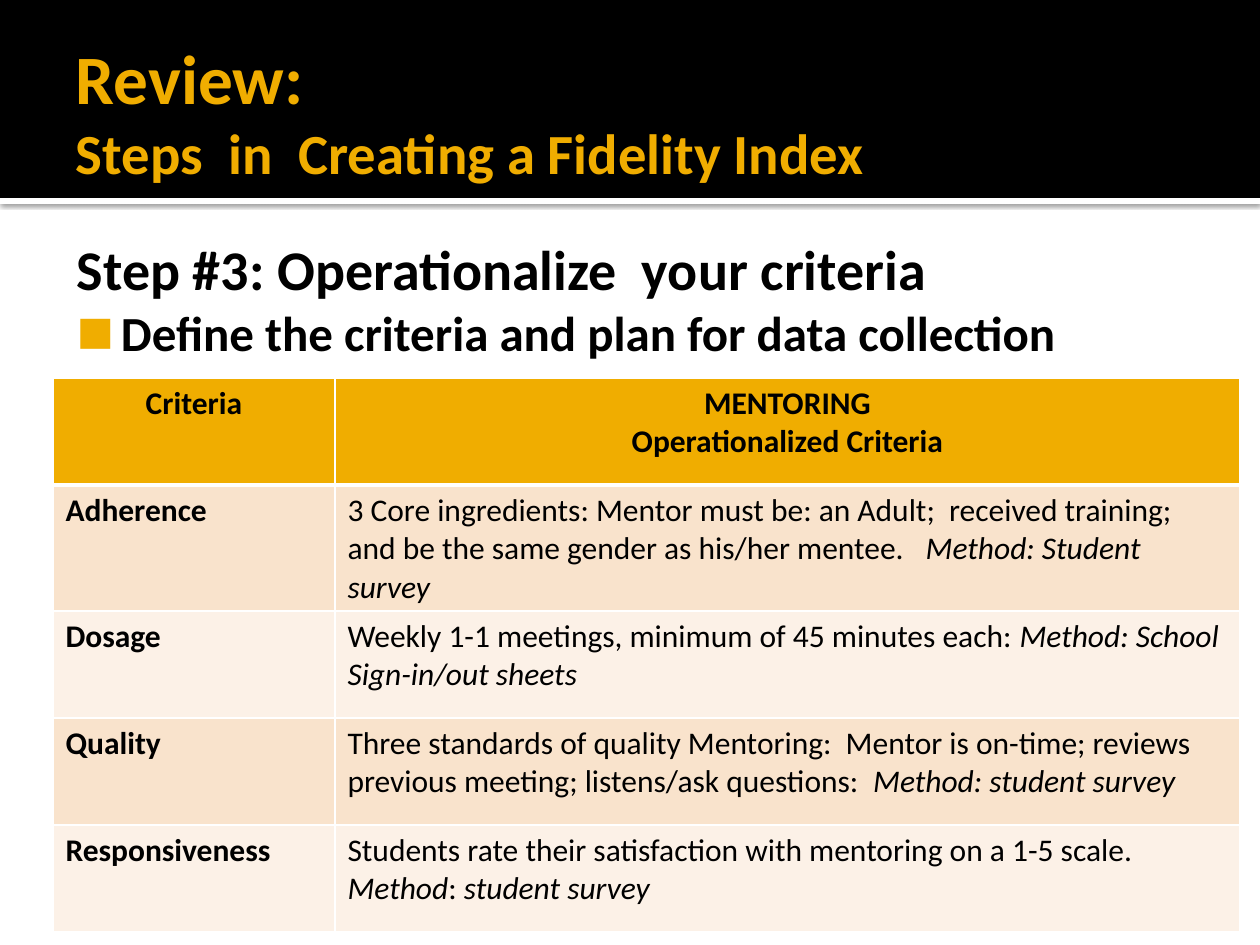
"""Build the fidelity index review slide with its table of criteria."""
from lxml import etree
from pptx import Presentation, util as u
from pptx.dml.color import RGBColor
from pptx.enum import shapes, text
from pptx.oxml.ns import qn

HUES = {"black": "000000", "white": "FFFFFF", "gold": "F0AD00",
        "peach": "F9E3CC", "cream": "FCF1E7"}
TITLE = [("Review:", 39.6), ("Steps  in  Creating a Fidelity Index", 32.4)]
STEPS = [("Step #3: Operationalize  your criteria", 32, False),
         ("Define the criteria and plan for data collection", 28, True)]
HEAD = ["Criteria"], ["MENTORING", "Operationalized Criteria"]
ROWS = [
    ("Adherence", [("3 Core ingredients: Mentor must be: an Adult;  received training; "
                    "and be the same gender as his/her mentee.   ", False),
                   ("Method: Student survey", True)]),
    ("Dosage", [("Weekly 1-1 meetings, minimum of 45 minutes each: ", False),
                ("Method: School Sign-in/out sheets", True)]),
    ("Quality", [("Three standards of quality Mentoring:  Mentor is on-time; reviews "
                  "previous meeting; listens/ask questions:  ", False),
                 ("Method: student survey", True)]),
    ("Responsiveness", [("Students rate their satisfaction with mentoring on a 1-5 scale. ", False),
                        ("Method", True), (": ", False), ("student survey", True)]),
]
COLS = 282, 905
ROW = 107


def px(n):
    return u.Emu(round(n * 914400 / 126))


def hue(name):
    return RGBColor.from_string(HUES[name])


def sub(node, tag, **atts):
    return etree.SubElement(node, qn(tag), {k: str(v) for k, v in atts.items()})


def style(font, size, name="black", bold=True):
    font.name, font.size, font.bold = "Calibri", u.Pt(size), bold
    font.color.rgb = hue(name)


def band(slide, top, high, name):
    bar = slide.shapes.add_shape(shapes.MSO_SHAPE.RECTANGLE, 0, px(top), px(1260), px(high))
    bar.shadow.inherit = False
    bar.fill.solid()
    bar.fill.fore_color.rgb = hue(name)
    bar.line.fill.background()
    return bar


def shade(bar):
    glow = sub(bar.element.spPr.find(qn("a:effectLst")), "a:outerShdw",
               blurRad=u.Pt(2.5), dist=u.Pt(0.8), dir=90 * 60000, algn="t", rotWithShape=0)
    sub(sub(glow, "a:srgbClr", val=HUES["black"]), "a:alpha", val=60000)


def frame(slide, box, pads):
    area = slide.shapes.add_textbox(*map(px, box)).text_frame
    area.word_wrap = True
    area.margin_left, area.margin_top, area.margin_right, area.margin_bottom = map(px, pads)
    return area


def dot(par, mark):
    props = par._p.get_or_add_pPr()
    props.set("marL", str(px(60)))
    props.set("indent", str(px(-44)))
    if mark:
        sub(sub(props, "a:buClr"), "a:srgbClr", val=HUES["gold"])
        sub(props, "a:buSzPct", val=80000)
        sub(props, "a:buFont", typeface="Calibri")
        sub(props, "a:buChar", char="■")
    else:
        sub(props, "a:buNone")


def paint(cell, name, base=1):
    props = cell._tc.get_or_add_tcPr()
    for side, wide in zip("LRTB", (1, 1, 1, base)):
        edge = sub(props, "a:ln" + side, w=u.Pt(wide))
        sub(sub(edge, "a:solidFill"), "a:srgbClr", val=HUES["white"])
    cell.fill.solid()
    cell.fill.fore_color.rgb = hue(name)


def grid(slide):
    count = len(ROWS) + 1
    table = slide.shapes.add_table(count, len(COLS), px(53), px(378),
                                   px(sum(COLS)), px(ROW * count)).table
    for col, wide in zip(table.columns, COLS):
        col.width = px(wide)
    for row in table.rows:
        row.height = px(ROW)
    for cell, lines in zip(table.rows[0].cells, HEAD):
        cell.text = "\n".join(lines)
        paint(cell, "gold", 3)
        for par in cell.text_frame.paragraphs:
            par.alignment = text.PP_ALIGN.CENTER
            style(par.font, 18)
    for i, (label, parts) in enumerate(ROWS):
        left, right = table.rows[i + 1].cells
        left.text = label
        style(left.text_frame.paragraphs[0].font, 18)
        par = right.text_frame.paragraphs[0]
        style(par.font, 18, bold=False)
        for words, slant in parts:
            run = par.add_run()
            run.text, run.font.italic = words, slant
        for cell in (left, right):
            paint(cell, ("peach", "cream")[i % 2])


def main():
    deck = Presentation()
    deck.slide_width, deck.slide_height = px(1260), px(945)
    slide = deck.slides.add_slide(deck.slide_layouts[6])
    shade(band(slide, 198, 6, "white"))
    band(slide, 0, 198, "black")

    body = frame(slide, (53, 222, 1134, 150), (8, 13, 13, 6))
    for i, (words, size, mark) in enumerate(STEPS):
        par = body.add_paragraph() if i else body.paragraphs[0]
        par.text = words
        style(par.font, size)
        dot(par, mark)

    grid(slide)

    title = frame(slide, (63, 32, 1134, 157), (13, 6, 6, 6))
    title.vertical_anchor = text.MSO_ANCHOR.MIDDLE
    par = title.paragraphs[0]
    for i, (words, size) in enumerate(TITLE):
        if i:
            par.add_line_break()
        run = par.add_run()
        run.text = words
        style(run.font, size, "gold")
    deck.save("out.pptx")


if __name__ == "__main__":
    main()
